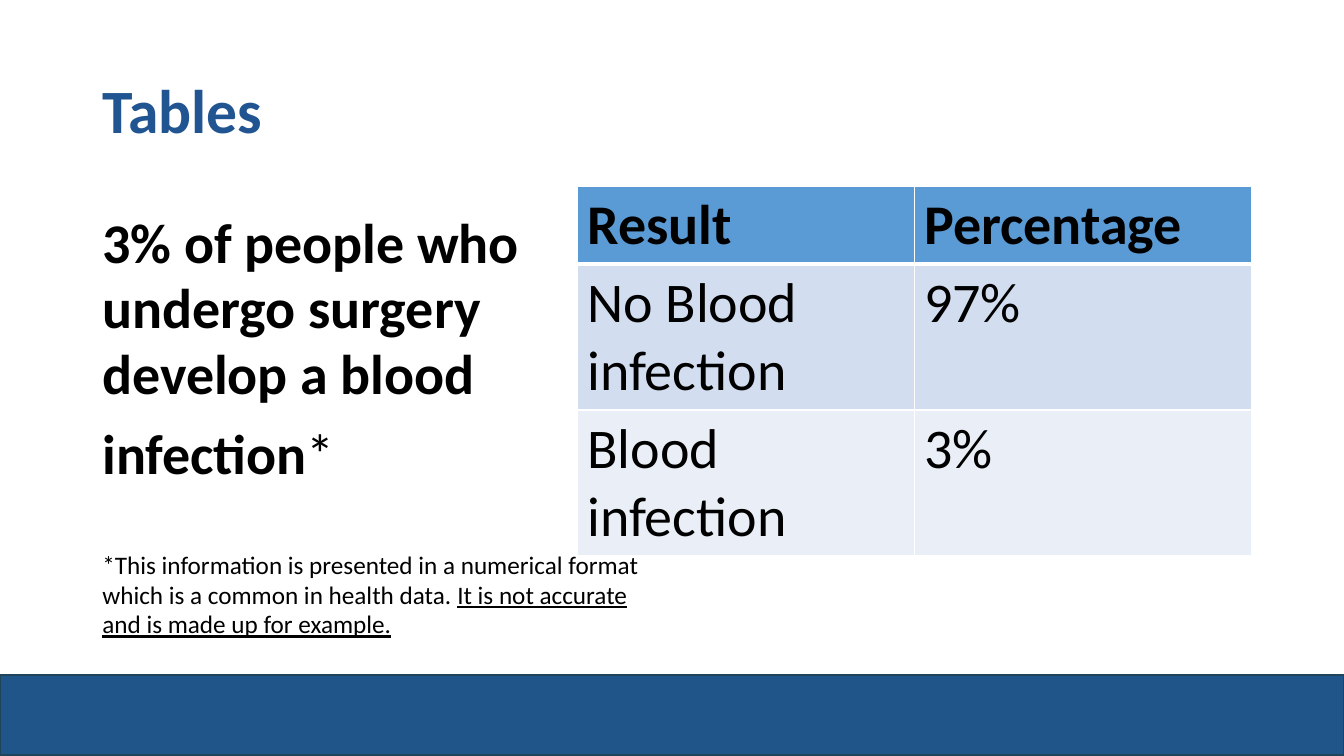
from lxml import etree
from pptx import Presentation
from pptx import util as u
from pptx.dml.color import RGBColor
from pptx.enum import shapes, text
from pptx.oxml.ns import qn

NAVY = RGBColor(0x20, 0x55, 0x8A)
BAR_EDGE = RGBColor(0x20, 0x45, 0x5A)
TITLE_BLUE = RGBColor(0x21, 0x55, 0x91)
BLACK = RGBColor(0, 0, 0)
WHITE = RGBColor(0xFF, 0xFF, 0xFF)
HEADER_BLUE = RGBColor(0x5B, 0x9B, 0xD5)
BANDS = [RGBColor(0xD2, 0xDE, 0xEF), RGBColor(0xEA, 0xEF, 0xF7)]


class SlideBuilder:
    font_name = "Calibri"

    def __init__(self, presentation):
        self.slide = presentation.slides.add_slide(presentation.slide_layouts[6])

    def fill_paragraph(self, paragraph, runs, **paragraph_format):
        """Add (words, font values) runs and set the paragraph's format."""
        for name, value in paragraph_format.items():
            setattr(paragraph, name, value)
        for words, values in runs:
            run = paragraph.add_run()
            run.text = words
            style = {"name": self.font_name, "size": u.Pt(40), **values}
            run.font.color.rgb = style.pop("color", BLACK)
            for name, value in style.items():
                setattr(run.font, name, value)

    def bar(self, left, top, width, height, fill, edge):
        shape = self.slide.shapes.add_shape(
            shapes.MSO_SHAPE.RECTANGLE, *map(u.Cm, (left, top, width, height)))
        shape.shadow.inherit = False
        shape.fill.solid()
        shape.fill.fore_color.rgb = fill
        shape.line.color.rgb = edge
        shape.line.width = u.Pt(1.5)

    def text_box(self, left, top, width, height, paragraphs,
                 anchor=text.MSO_ANCHOR.TOP):
        shape = self.slide.shapes.add_textbox(*map(u.Cm, (left, top, width, height)))
        frame = shape.text_frame
        frame.word_wrap = True
        frame.vertical_anchor = anchor
        for index, (runs, paragraph_format) in enumerate(paragraphs):
            paragraph = frame.add_paragraph() if index else frame.paragraphs[0]
            self.fill_paragraph(paragraph, runs, **paragraph_format)

    def border(self, cell, side, points):
        properties = cell._tc.get_or_add_tcPr()
        line = etree.SubElement(properties, qn(f"a:ln{side}"), w=str(u.Pt(points)))
        fill = etree.SubElement(line, qn("a:solidFill"))
        etree.SubElement(fill, qn("a:srgbClr"), val=str(WHITE))

    def table(self, left, top, width, row_heights, rows):
        frame = self.slide.shapes.add_table(
            len(rows), len(rows[0]),
            *map(u.Cm, (left, top, width, sum(row_heights))))
        table = frame.table
        for row_index, (height, words) in enumerate(zip(row_heights, rows)):
            table.rows[row_index].height = u.Cm(height)
            header = row_index == 0
            for column_index, label in enumerate(words):
                cell = table.cell(row_index, column_index)
                for side in "LRTB":
                    header_edge = (row_index, side) in [(0, "B"), (1, "T")]
                    self.border(cell, side, 3 if header_edge else 1)
                cell.fill.solid()
                cell.fill.fore_color.rgb = (
                    HEADER_BLUE if header else BANDS[(row_index - 1) % 2])
                self.fill_paragraph(cell.text_frame.paragraphs[0],
                                    [(label, {"bold": header})])


def main():
    presentation = Presentation()
    presentation.slide_width = u.Cm(33.87)
    presentation.slide_height = u.Cm(19.05)
    builder = SlideBuilder(presentation)

    builder.bar(0, 17.02, 33.87, 2.01, NAVY, BAR_EDGE)
    builder.text_box(
        2.33, 1.02, 29.21, 3.68,
        [([("Tables", {"size": u.Pt(44), "bold": True, "color": TITLE_BLUE})],
          {"line_spacing": 0.9})],
        anchor=text.MSO_ANCHOR.MIDDLE)

    bold, small = {"bold": True}, {"size": u.Pt(18)}
    builder.text_box(2.33, 5.18, 14.4, 12, [
        ([("3% of people who undergo surgery develop a blood", bold)],
         {"line_spacing": 0.98}),
        ([("infection", bold), ("*", {})],
         {"line_spacing": 0.98, "space_before": u.Pt(10)}),
        ([("*This information is presented in a numerical format which is "
           "a common in health data. ", small),
          ("It is not accurate and is made up for example.",
           {**small, "underline": True})],
         {"line_spacing": 0.98, "space_before": u.Pt(45)}),
    ])

    builder.table(14.55, 4.7, 16.98, [1.95, 3.68, 3.68], [
        ["Result", "Percentage"],
        ["No Blood infection", "97%"],
        ["Blood infection", "3%"],
    ])
    presentation.save("out.pptx")


if __name__ == "__main__":
    main()
